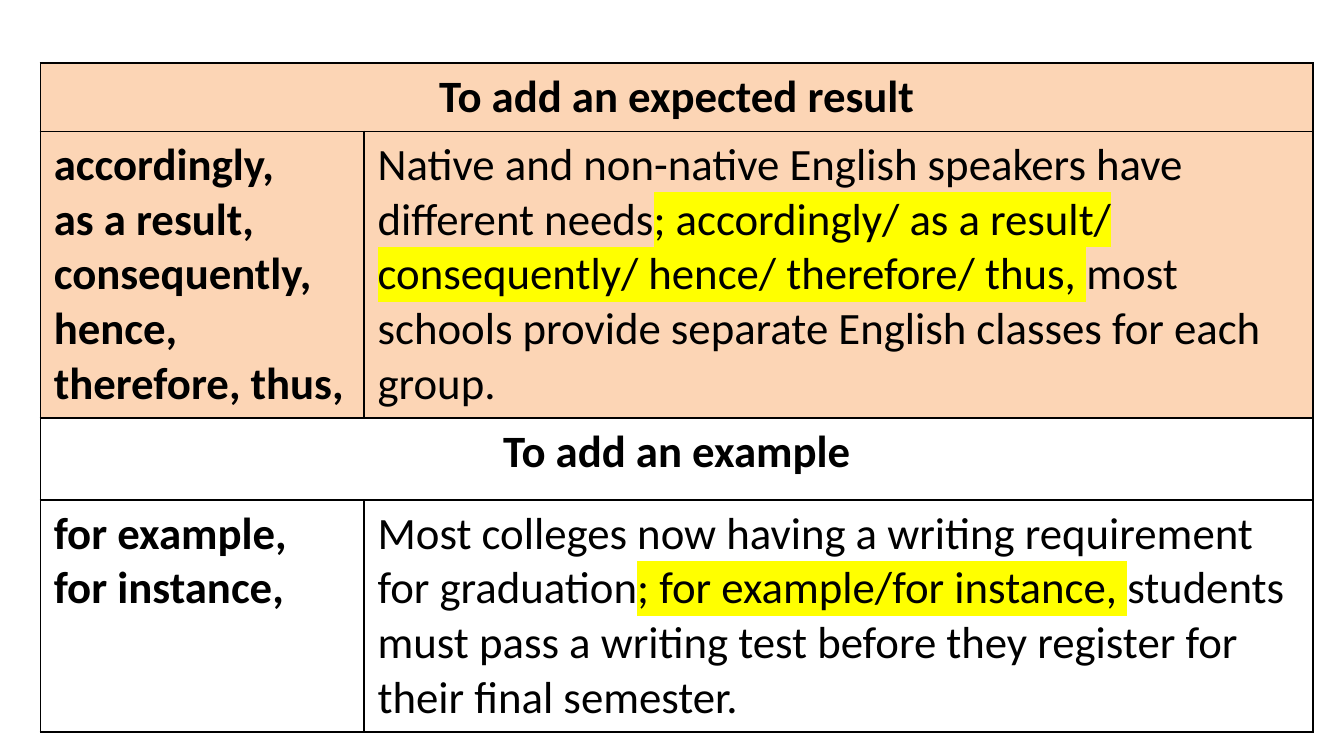
from dataclasses import dataclass

from lxml.etree import SubElement
from pptx import Presentation
from pptx.dml.color import RGBColor as RGB
from pptx.enum.text import PP_ALIGN as Align
from pptx.oxml import parse_xml
from pptx.oxml.ns import nsdecls, qn
from pptx.util import Inches, Pt


@dataclass(frozen=True)
class Theme:
    font: str = "Calibri"
    size: int = 24
    ink: str = "000000"
    peach: str = "FCD5B5"
    marker: str = "FFFF00"
    border: float = 1


def add_run(p, text, theme, bold=False, highlight=None):
    r = p.add_run()
    r.text = text
    r.font.size, r.font.bold = Pt(theme.size), bold
    r.font.color.rgb = RGB.from_string(theme.ink)
    if highlight:
        mark = SubElement(r.font._element, qn("a:highlight"))
        SubElement(mark, qn("a:srgbClr"), val=highlight)
    r.font.name = theme.font


class SlideBuilder:
    def __init__(self, prs, theme):
        self.theme = theme
        self.slide = prs.slides.add_slide(prs.slide_layouts[6])

    def table(self, left, top, widths, heights):
        frame = self.slide.shapes.add_table(
            len(heights), len(widths), Inches(left), Inches(top),
            Inches(sum(widths)), Inches(sum(heights)))
        table = frame.table
        table.first_row = table.horz_banding = False
        for col, width in zip(table.columns, widths):
            col.width = Inches(width)
        for row, height in zip(table.rows, heights):
            row.height = Inches(height)
        return table

    def cell(self, cell, paragraphs, fill=None, align=Align.LEFT):
        """Each paragraph is a list of (text, format) runs."""
        tf = cell.text_frame
        for i, runs in enumerate(paragraphs):
            p = tf.paragraphs[0] if i == 0 else tf.add_paragraph()
            p.alignment = align
            for text, style in runs:
                add_run(p, text, self.theme, **style)
        self.paint(cell, fill)

    def paint(self, cell, fill):
        if fill:
            cell.fill.solid()
            cell.fill.fore_color.rgb = RGB.from_string(fill)
        else:
            cell.fill.background()
        # Borders come before the fill in the cell properties
        props = cell._tc.get_or_add_tcPr()
        for i, side in enumerate(("lnL", "lnR", "lnT", "lnB")):
            props.insert(i, parse_xml(
                f'<a:{side} {nsdecls("a")} w="{Pt(self.theme.border)}"><a:solidFill>'
                f'<a:srgbClr val="{self.theme.ink}"/></a:solidFill></a:{side}>'))

    def section(self, table, row, heading, words, example, fill=None):
        """A merged heading row above a row of connectors and their example."""
        bold = {"bold": True}
        first, last = table.cell(row, 0), table.cell(row, 1)
        first.merge(last)
        self.cell(first, [[(heading, bold)]], fill, Align.CENTER)
        self.paint(last, fill)
        self.cell(table.cell(row + 1, 0), [[(w, bold)] for w in words], fill)
        before, marked, after = example
        runs = [(before, {}), (marked, {"highlight": self.theme.marker}), (after, {})]
        self.cell(table.cell(row + 1, 1), [runs], fill)


def main():
    theme = Theme()
    prs = Presentation()
    # Widescreen, 16:9
    prs.slide_width = Inches(10)
    prs.slide_height = prs.slide_width * 9 // 16
    s = SlideBuilder(prs, theme)
    table = s.table(0.3, 0.47, widths=[2.41, 7.06], heights=[0.49, 1.54, 0.61, 1.54])

    # Expected result
    s.section(
        table, 0, "To add an expected result",
        ["accordingly,", "as a result, consequently, hence, therefore, thus,"],
        ("Native and non-native English speakers have different needs",
         "; accordingly/ as a result/ consequently/ hence/ therefore/ thus, ",
         "most schools provide separate English classes for each group."),
        fill=theme.peach)

    # Example
    s.section(
        table, 2, "To add an example",
        ["for example,", "for instance,"],
        ("Most colleges now having a writing requirement for graduation",
         "; for example/for instance, ",
         "students must pass a writing test before they register for "
         "their final semester."))

    prs.save("out.pptx")


if __name__ == "__main__":
    main()
